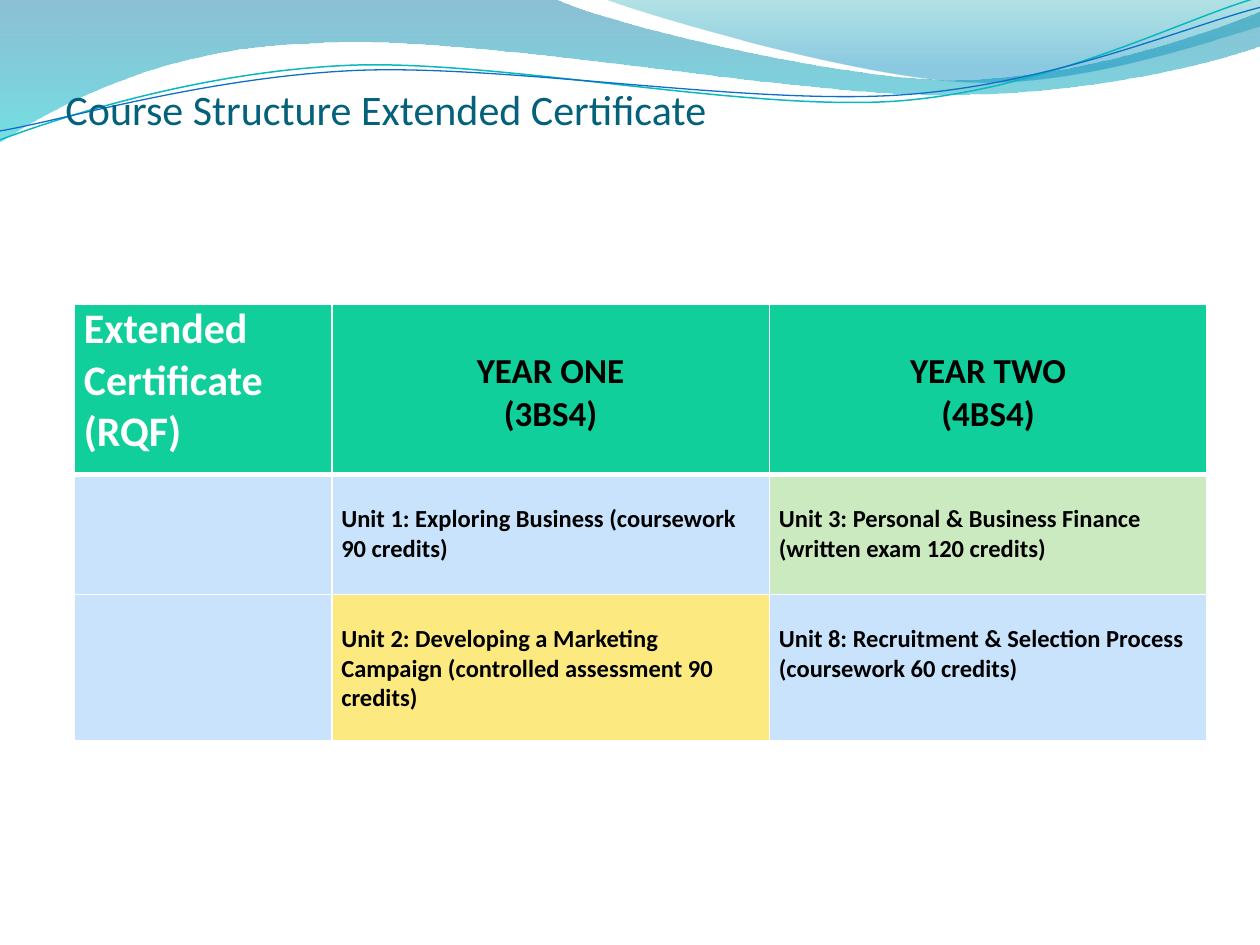
from lxml.etree import SubElement
from pptx import Presentation
from pptx.dml.color import RGBColor
from pptx.enum.text import MSO_ANCHOR as ANCHOR, PP_ALIGN as ALIGN
from pptx.oxml.ns import qn
from pptx.util import Cm, Pt

GREEN, BLUE, LIME, YELLOW = "10CF9B", "C8E3FB", "CBEAC0", "FCEA80"
WHITE, BLACK = "FFFFFF", "000000"

BACK_WAVE = [
    (0, 0), (11.18, -0.03),
    (12.09, 0.43, 16.87, 1.6, 19.25, 1.6),
    (21.67, 1.6, 24.33, 0.66, 25.4, 0.23), (25.43, 0.91),
    (24.97, 1.12, 22.1, 1.93, 18.95, 1.91),
    (15.8, 1.91, 9.7, 0.71, 6.53, 0.86),
    (3.28, 0.91, 1.17, 2.11, -0.03, 2.87), (0, 0),
]
FRONT_WAVE = [
    (12.17, -0.03),
    (12.93, 0.28, 17.32, 1.57, 19.53, 1.65),
    (21.74, 1.75, 24.41, 0.81, 25.4, 0.53), (25.4, 0), (12.17, -0.03),
]
TEAL_LINE = [
    (-0.05, 2.22),
    (1.19, 1.82, 4.02, 1.04, 7.05, 1.05),
    (10.05, 1.07, 15.02, 2.37, 18.08, 2.29),
    (21.13, 2.2, 23.87, 0.91, 25.41, 0.55),
]
BLUE_LINE = [
    (-0.04, 2.04),
    (1.16, 1.9, 4.18, 1.15, 7.2, 1.16),
    (10.25, 1.18, 15.13, 2.25, 18.18, 2.17),
    (21.21, 2.1, 23.93, 1.06, 25.45, 0.75),
]

COLS = [5.19, 8.82, 8.82]
ROWS = [3.43, 2.42, 2.99, 1.19]
CELLS = [
    [(["Extended Certificate (RQF)"], GREEN),
     (["YEAR ONE", "(3BS4)"], GREEN),
     (["YEAR TWO", "(4BS4)"], GREEN)],
    [([], BLUE),
     (["Unit 1: Exploring Business (coursework 90 credits)"], BLUE),
     (["Unit 3: Personal & Business Finance (written exam 120 credits)"], LIME)],
    [([], BLUE),
     (["Unit 2: Developing a Marketing Campaign (controlled assessment 90 credits)"], YELLOW),
     (["Unit 8: Recruitment & Selection Process (coursework 60 credits)"], BLUE)],
    [([], WHITE)] * 3,
]


def rgb(value):
    return RGBColor.from_string(value)


class Deck:
    font = "Calibri"

    def __init__(self):
        self.prs = Presentation()
        self.prs.slide_width, self.prs.slide_height = Cm(25.4), Cm(19.05)
        self.s = self.prs.slides.add_slide(self.prs.slide_layouts[5])

    def outline(self, nodes, close):
        ends = [(Cm(node[-2]), Cm(node[-1])) for node in nodes]
        fb = self.s.shapes.build_freeform(*ends[0])
        fb.add_line_segments(ends[1:-1] if close else ends[1:], close=close)
        sp = fb.convert_to_shape()
        sp.shadow.inherit = False
        segments = list(sp._element.iter(qn("a:lnTo")))
        for segment, node in zip(segments, nodes[1:]):
            if len(node) == 6:
                self.bend(sp, segment, node)
        return sp

    def bend(self, sp, segment, node):
        segment.tag = qn("a:cubicBezTo")
        end = segment[0]
        for x, y in (node[:2], node[2:4]):
            pt = SubElement(segment, qn("a:pt"))
            pt.set("x", str(Cm(x) - sp.left))
            pt.set("y", str(Cm(y) - sp.top))
        segment.append(end)

    def wave(self, nodes, stops):
        sp = self.outline(nodes, True)
        sp.line.fill.background()
        sp.fill.gradient()
        sp.fill.gradient_angle = 270
        for stop, (position, color, _) in zip(sp.fill.gradient_stops, stops):
            stop.position = position
            stop.color.rgb = rgb(color)
        colors = list(sp._element.spPr.iter(qn("a:srgbClr")))
        for clr, (_, _, opacity) in zip(colors, stops):
            SubElement(clr, qn("a:alpha")).set("val", str(opacity * 1000))

    def curve(self, nodes, color, width):
        sp = self.outline(nodes, False)
        sp.rotation = 357.3
        sp.fill.background()
        sp.line.color.rgb = rgb(color)
        sp.line.width = Pt(width)

    def run(self, p, text, size, color, bold=False):
        r = p.add_run()
        r.text = text
        r.font.name, r.font.size, r.font.bold = self.font, Pt(size), bold
        r.font.color.rgb = rgb(color)

    def title(self, text, left, top, width, height):
        sp = self.s.shapes.title
        sp._element.getparent().append(sp._element)
        sp.left, sp.top, sp.width, sp.height = map(Cm, (left, top, width, height))
        tf = sp.text_frame
        tf.word_wrap, tf.vertical_anchor = True, ANCHOR.BOTTOM
        tf.margin_left = tf.margin_right = tf.margin_bottom = 0
        tf.margin_top = Cm(0.13)
        p = tf.paragraphs[0]
        p.alignment = ALIGN.LEFT
        self.run(p, text, 24, "04617B")

    def border(self, cell, widths):
        tcPr = cell._tc.get_or_add_tcPr()
        for side, width in zip("LRTB", widths):
            ln = SubElement(tcPr, qn(f"a:ln{side}"), w=str(Pt(width)))
            fill = SubElement(ln, qn("a:solidFill"))
            SubElement(fill, qn("a:srgbClr"), val=WHITE)

    def cell(self, cell, lines, fill, size, color, top, align):
        cell.fill.solid()
        cell.fill.fore_color.rgb = rgb(fill)
        cell.margin_left = cell.margin_right = Cm(0.19)
        cell.margin_top, cell.margin_bottom = Cm(top), 0
        tf = cell.text_frame
        for i, line in enumerate(lines):
            p = tf.add_paragraph() if i else tf.paragraphs[0]
            p.alignment = align
            self.run(p, line, size, color, True)

    def table(self, left, top, cols, rows, cells):
        frame = self.s.shapes.add_table(len(rows), len(cols), Cm(left), Cm(top),
                                        Cm(sum(cols)), Cm(sum(rows)))
        tbl = frame.table
        for col, width in zip(tbl.columns, cols):
            col.width = Cm(width)
        for row, height in zip(tbl.rows, rows):
            row.height = Cm(height)
        for i, row in enumerate(cells):
            for j, (lines, fill) in enumerate(row):
                if i:
                    style = (14, BLACK, 0.6, ALIGN.LEFT)
                elif j:
                    style = (20, BLACK, 0.93, ALIGN.CENTER)
                else:
                    style = (24, WHITE, 0, ALIGN.LEFT)
                cell = tbl.cell(i, j)
                self.border(cell, (1, 1, 3 if i == 3 else 1, 3 if i == 0 else 1))
                self.cell(cell, lines, fill, *style)


def main():
    deck = Deck()
    deck.wave(BACK_WAVE, [(0, "0074A1", 45), (1, "00C6CF", 55)])
    deck.wave(FRONT_WAVE, [(0, "00A1A9", 30), (0.8, "008BBF", 45)])
    deck.curve(TEAL_LINE, "0AB8BF", 0.85)
    deck.curve(BLUE_LINE, "0F6FC6", 0.75)
    deck.table(1.5, 6.13, COLS, ROWS, CELLS)
    deck.title("Course Structure Extended Certificate", 1.32, -0.48, 22.86, 3.18)
    deck.prs.save("out.pptx")


if __name__ == "__main__":
    main()
